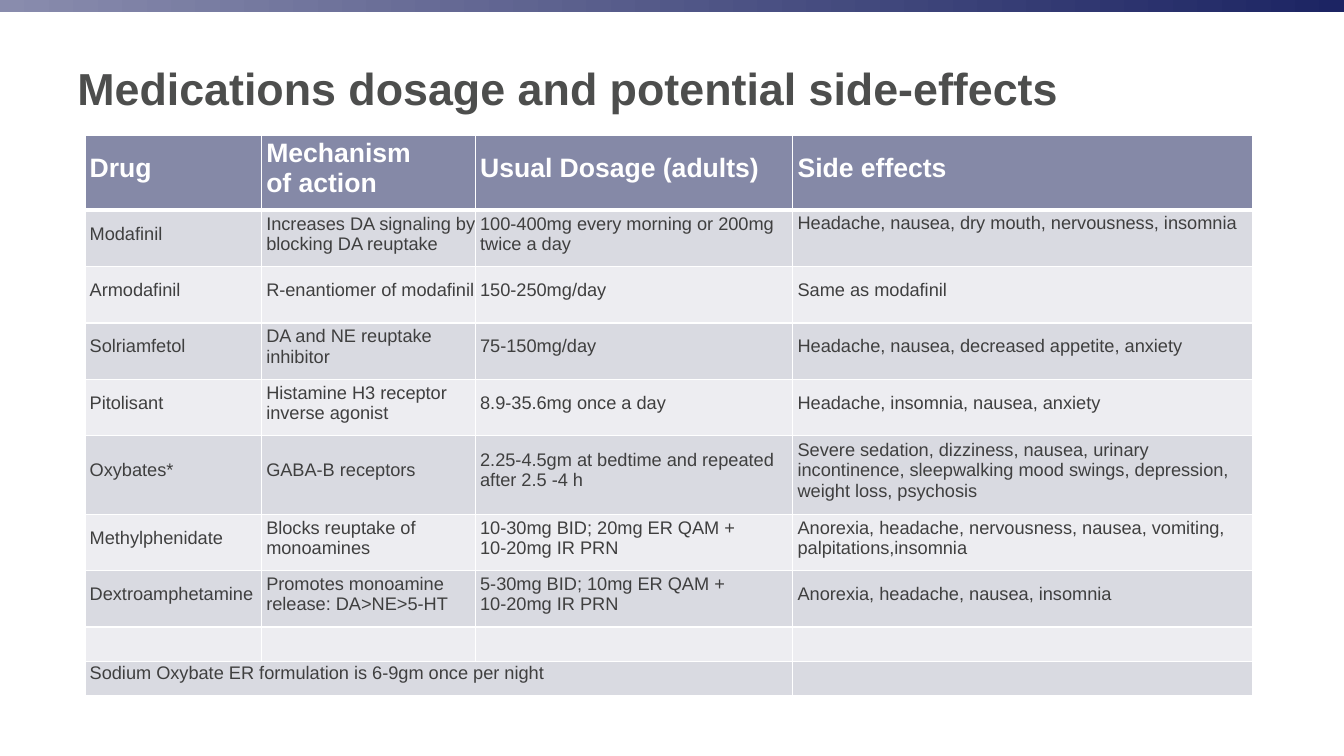
from lxml import etree
from pptx import Presentation
from pptx.dml.color import RGBColor
from pptx.enum.shapes import MSO_SHAPE
from pptx.enum.text import MSO_ANCHOR
from pptx.oxml.ns import qn
from pptx.util import Cm, Pt

RECTANGLE = MSO_SHAPE.RECTANGLE
MIDDLE, TOP = MSO_ANCHOR.MIDDLE, MSO_ANCHOR.TOP

TITLE = "Medications dosage and potential side-effects"
HEADINGS = ("Drug", "Mechanism\nof action", "Usual Dosage (adults)", "Side effects")
MEDICATIONS = [
    ("Modafinil", "Increases DA signaling by blocking DA reuptake",
     "100-400mg every morning or 200mg twice a day",
     "Headache, nausea, dry mouth, nervousness, insomnia"),
    ("Armodafinil", "R-enantiomer of modafinil", "150-250mg/day", "Same as modafinil"),
    ("Solriamfetol", "DA and NE reuptake inhibitor", "75-150mg/day",
     "Headache, nausea, decreased appetite, anxiety"),
    ("Pitolisant", "Histamine H3 receptor inverse agonist", "8.9-35.6mg once a day",
     "Headache, insomnia, nausea, anxiety"),
    ("Oxybates*", "GABA-B receptors", "2.25-4.5gm at bedtime and repeated after 2.5 -4 h",
     "Severe sedation, dizziness, nausea, urinary incontinence, "
     "sleepwalking mood swings, depression, weight loss, psychosis"),
    ("Methylphenidate", "Blocks reuptake of monoamines",
     "10-30mg BID; 20mg ER QAM +\n10-20mg IR PRN",
     "Anorexia, headache, nervousness, nausea, vomiting, palpitations,insomnia"),
    ("Dextroamphetamine", "Promotes monoamine release: DA>NE>5-HT",
     "5-30mg BID; 10mg ER QAM +\n10-20mg IR PRN",
     "Anorexia, headache, nausea, insomnia"),
]
SPACER = ("", "", "", "")
FOOTNOTE = ("Sodium Oxybate ER formulation is 6-9gm once per night", "", "", "")

COLUMN_WIDTHS = (4.45, 5.39, 8, 11.58)
HEADER_HEIGHT, DRUG_HEIGHT, TALL_HEIGHT, NOTE_HEIGHT = 1.9, 1.42, 1.98, 0.86
HEADER_FILL, BANDS = "8589A7", ("EDEDF1", "D9DAE1")
WHITE, BODY_COLOR, TITLE_COLOR = "FFFFFF", "3F3F3F", "4D4E4D"
FONT = "Arial"


def rgb(color):
    return RGBColor.from_string(color)


def write(frame, text, size, color, bold=False):
    """Fill a text frame, one paragraph for each line of text."""
    frame.word_wrap = True
    for i, line in enumerate(text.split("\n")):
        paragraph = frame.add_paragraph() if i else frame.paragraphs[0]
        if not line:
            end = etree.SubElement(paragraph._p, qn("a:endParaRPr"))
            end.set("sz", str(size * 100))
            continue
        run = paragraph.add_run()
        run.text = line
        run.font.name, run.font.size, run.font.bold = FONT, Pt(size), bold
        run.font.color.rgb = rgb(color)


def add_borders(cell, **widths):
    """Draw white cell edges; widths in points are keyed L, R, T, B."""
    properties = cell._tc.get_or_add_tcPr()
    for edge, width in widths.items():
        line = etree.SubElement(properties, qn(f"a:ln{edge}"), w=str(Pt(width)))
        fill = etree.SubElement(line, qn("a:solidFill"))
        etree.SubElement(fill, qn("a:srgbClr"), val=WHITE)


prs = Presentation()
prs.slide_width, prs.slide_height = Cm(33.87), Cm(19.05)
slide = prs.slides.add_slide(prs.slide_layouts[6])

top_band = slide.shapes.add_shape(RECTANGLE, 0, 0, prs.slide_width, Cm(0.3))
top_band.shadow.inherit = False
top_band.line.fill.background()
top_band.fill.gradient()
top_band.fill.gradient_angle = 0
for stop, color in zip(top_band.fill.gradient_stops, ("898CAD", "1C2463")):
    stop.color.rgb = rgb(color)

title = slide.shapes.add_textbox(Cm(1.7), Cm(0.56), Cm(29.85), Cm(3.3)).text_frame
title.vertical_anchor = MIDDLE
write(title, TITLE, size=32, color=TITLE_COLOR, bold=True)

rows = [HEADINGS, *MEDICATIONS, SPACER, FOOTNOTE]
heights = [HEADER_HEIGHT]
heights += [TALL_HEIGHT if drug[0] == "Oxybates*" else DRUG_HEIGHT for drug in MEDICATIONS]
heights += [NOTE_HEIGHT, NOTE_HEIGHT]

medications = slide.shapes.add_table(
    len(rows), len(HEADINGS), Cm(2.14), Cm(3.4),
    Cm(sum(COLUMN_WIDTHS)), Cm(sum(heights))).table
for column, width in zip(medications.columns, COLUMN_WIDTHS):
    column.width = Cm(width)

for r, (texts, height) in enumerate(zip(rows, heights)):
    medications.rows[r].height = Cm(height)
    is_header = r == 0
    for c, text in enumerate(texts):
        cell = medications.cell(r, c)
        cell.margin_left, cell.margin_right = Cm(0.12), 0
        cell.margin_top, cell.margin_bottom = Cm(0.02), Cm(0.25)
        cell.vertical_anchor = MIDDLE
        add_borders(cell, L=1, R=1, T=3 if r == 1 else 1, B=3 if is_header else 1)
        cell.fill.solid()
        cell.fill.fore_color.rgb = rgb(HEADER_FILL if is_header else BANDS[r % 2])
        write(cell.text_frame, text, size=19 if is_header else 13,
              color=WHITE if is_header else BODY_COLOR, bold=is_header)

modafinil_effects = medications.cell(1, 3)
modafinil_effects.vertical_anchor = TOP
modafinil_effects.margin_top = Cm(0.06)

last = len(rows) - 1
medications.cell(last, 0).merge(medications.cell(last, 2))

prs.save("out.pptx")
